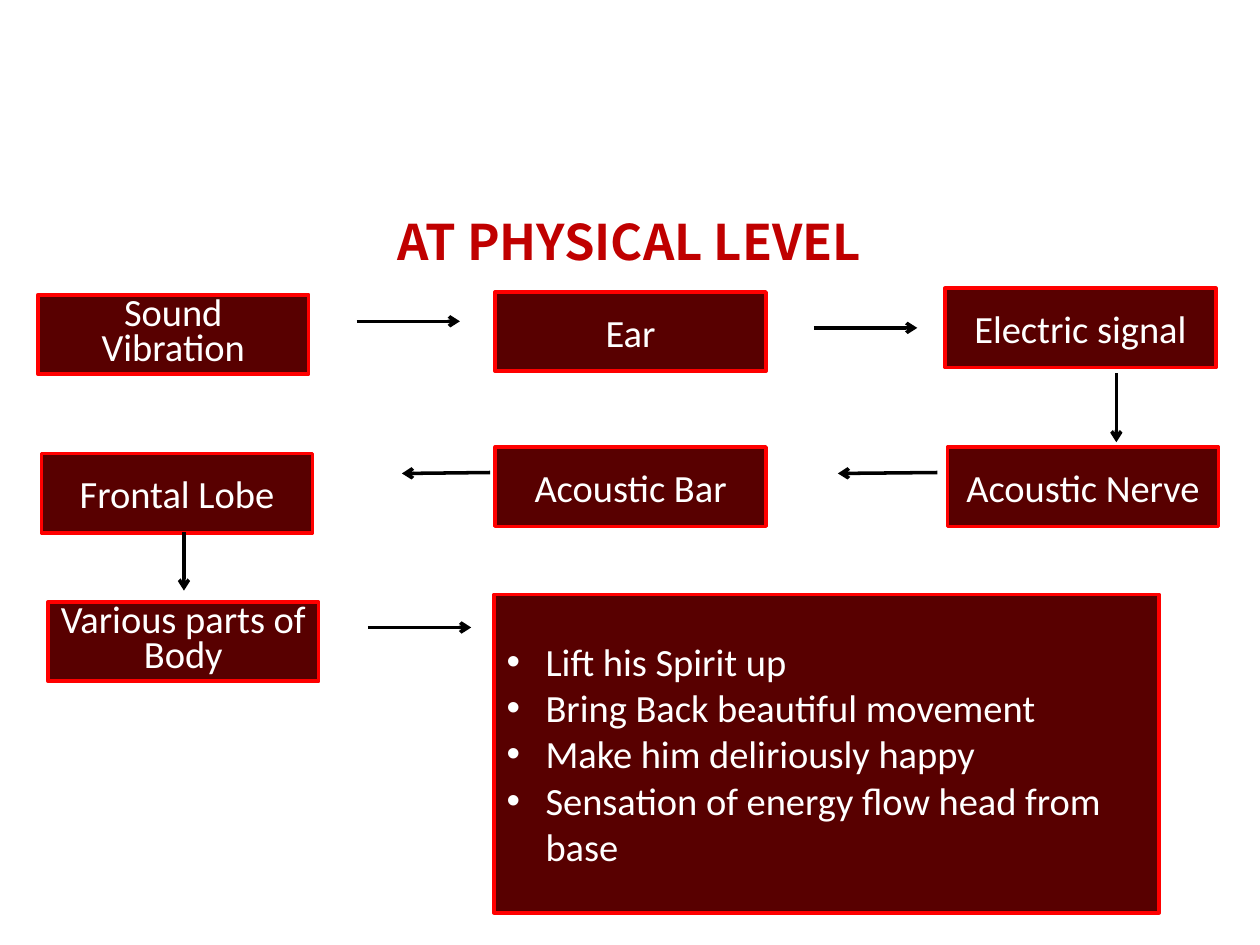
from lxml import etree
from pptx import Presentation
from pptx import util as u
from pptx.dml.color import RGBColor
from pptx.enum import shapes, text
from pptx.oxml import ns

WIDTH, HEIGHT = u.Inches(10), u.Inches(7.5)
BOX_SIZE = (21.5, 8.4)
STEPS = [
    ("Sound Vibration", 3, 31.2, 20),
    ("Ear", 39.3, 30.9, None),
    ("Electric signal", 75, 30.5, None),
    ("Acoustic Nerve", 75.2, 47.3, None),
    ("Acoustic Bar", 39.3, 47.3, None),
    ("Frontal Lobe", 3.3, 48, None),
    ("Various parts of Body", 3.8, 63.7, 20),
]
ARROWS = [
    (28.3, 34, 36.5, 34),
    (64.6, 34.7, 72.8, 34.7),
    (88.6, 39.5, 88.6, 46.8),
    (74.4, 50, 66.5, 50.1),
    (38.9, 50, 31.9, 50.1),
    (14.6, 56.3, 14.6, 62.5),
    (29.2, 66.4, 37.4, 66.4),
]
EFFECTS = [
    "Lift his Spirit up",
    "Bring Back beautiful movement",
    "Make him deliriously happy",
    "Sensation of energy flow head from base",
]


def color(value):
    """Turn a hex string into a colour."""
    return RGBColor.from_string(value)


def place(x, y):
    """Turn percentages of the slide into lengths."""
    return round(WIDTH * x / 100), round(HEIGHT * y / 100)


def move(sp, x, y, w, h):
    """Put a placeholder at a share of the slide."""
    sp.left, sp.top = place(x, y)
    sp.width, sp.height = place(w, h)


def paint(sp):
    """Give a box its dark fill and red border."""
    sp.fill.solid()
    sp.fill.fore_color.rgb = color("580000")
    sp.line.color.rgb = color("FF0000")
    sp.line.width = u.Pt(2)


def write(tf, lines, font="Calibri", size=22, fill="FFFFFF", bold=False,
          align=text.PP_ALIGN.CENTER, spacing=None, bullet=None):
    """Write formatted paragraphs into a text frame."""
    tf.word_wrap = True
    tf.auto_size = text.MSO_AUTO_SIZE.NONE
    tf.vertical_anchor = text.MSO_ANCHOR.MIDDLE
    for i, line in enumerate(lines):
        p = tf.add_paragraph() if i else tf.paragraphs[0]
        p.alignment = align
        p.space_before = u.Pt(0)
        if spacing:
            p.line_spacing = u.Pt(spacing)
        if bullet:
            pPr = p._p.get_or_add_pPr()
            indent = u.Inches(0.31)
            pPr.set("marL", str(indent))
            pPr.set("indent", str(-indent))
            etree.SubElement(pPr, ns.qn("a:buFont"), typeface="Arial")
            etree.SubElement(pPr, ns.qn("a:buChar"), char=bullet)
        r = p.add_run()
        r.text = line
        r.font.name, r.font.size, r.font.bold = font, u.Pt(size), bold
        r.font.color.rgb = color(fill)


def add_step(s, label, x, y, spacing):
    """Add one labelled step of the flow."""
    sp = s.shapes.add_shape(shapes.MSO_SHAPE.RECTANGLE,
                            *place(x, y), *place(*BOX_SIZE))
    sp.shadow.inherit = False
    paint(sp)
    write(sp.text_frame, [label], spacing=spacing)


def add_arrow(s, x1, y1, x2, y2):
    """Add a black arrow between two points."""
    line = s.shapes.add_connector(shapes.MSO_CONNECTOR.STRAIGHT,
                                  *place(x1, y1), *place(x2, y2))
    line.line.color.rgb = color("000000")
    line.line.width = u.Pt(2)
    etree.SubElement(line.line._get_or_add_ln(), ns.qn("a:tailEnd"), type="arrow")
    etree.SubElement(line._element.spPr, ns.qn("a:effectLst"))


def main():
    """Build the flow slide and save it."""
    prs = Presentation()
    prs.slide_width, prs.slide_height = WIDTH, HEIGHT
    s = prs.slides.add_slide(prs.slide_layouts[1])
    title, body = s.placeholders
    move(title, 3.3, 20, 93.3, 11)
    write(title.text_frame, ["AT PHYSICAL LEVEL"], font="Noto Sans CJK SC",
          size=28, fill="C00000", bold=True)
    move(body, 39.2, 62.9, 52.8, 33.7)
    paint(body)
    write(body.text_frame, EFFECTS, align=text.PP_ALIGN.LEFT, bullet="•")
    for step in STEPS:
        add_step(s, *step)
    for arrow in ARROWS:
        add_arrow(s, *arrow)
    prs.save("out.pptx")


if __name__ == "__main__":
    main()
